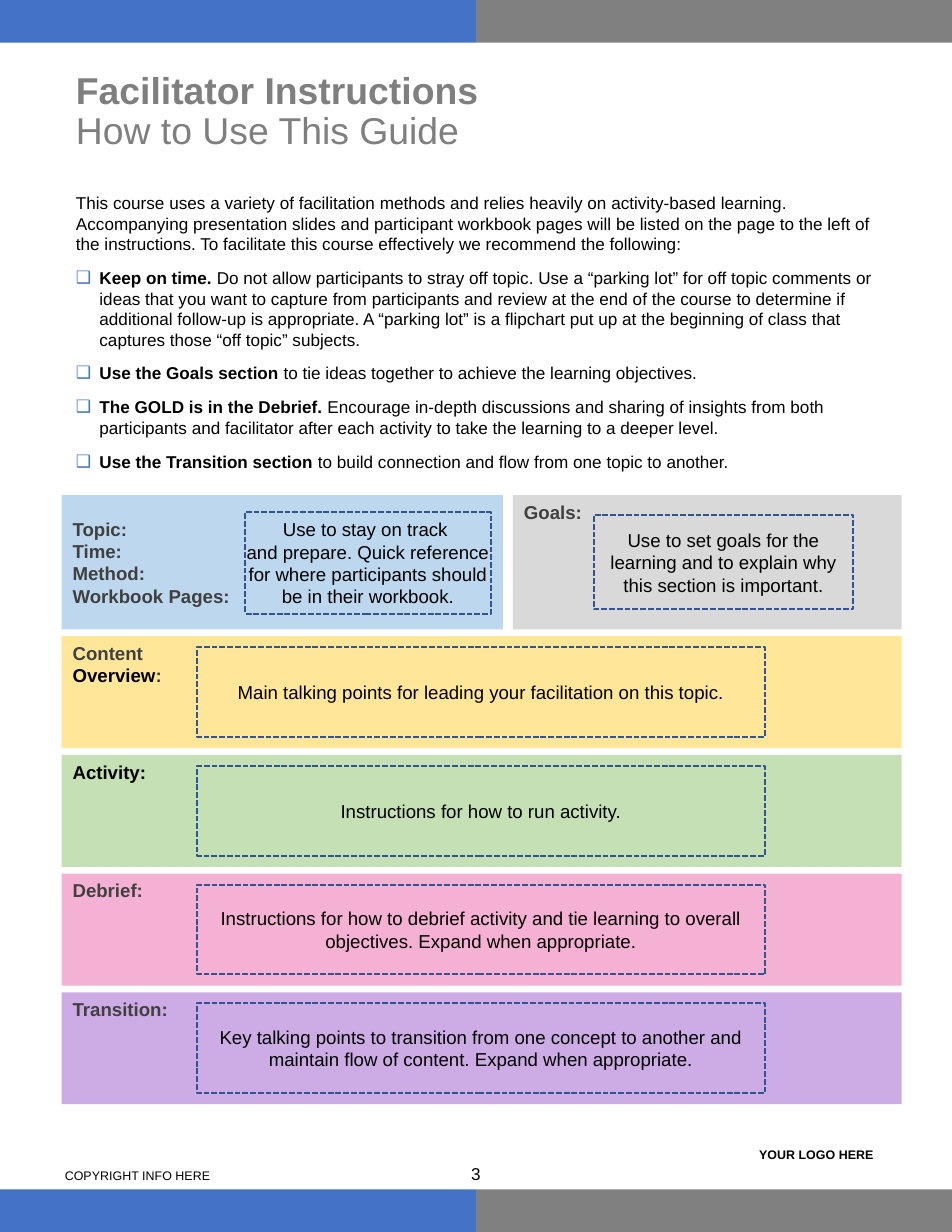
"""Build the facilitator instructions page of a course guide."""
from copy import deepcopy
from dataclasses import dataclass
from typing import NamedTuple

from lxml import etree
from pptx import Presentation
from pptx.dml.color import RGBColor
from pptx.enum.dml import MSO_LINE
from pptx.enum.shapes import MSO_SHAPE
from pptx.enum.text import MSO_ANCHOR, PP_ALIGN
from pptx.oxml.ns import qn
from pptx.util import Emu, Inches, Pt

RECT = MSO_SHAPE.RECTANGLE
DASH = MSO_LINE.SQUARE_DOT
TOP, MIDDLE = MSO_ANCHOR.TOP, MSO_ANCHOR.MIDDLE
LEFT, CENTER = PP_ALIGN.LEFT, PP_ALIGN.CENTER
COLS, ROWS = 85, 110
WIDTH, HEIGHT = Inches(8.5), Inches(11)


@dataclass(frozen=True)
class Theme:
    font: str = "Arial"
    blue: str = "4472C4"
    gray: str = "808080"
    title: str = "7F7F7F"
    ink: str = "000000"
    label: str = "404040"
    dash: str = "325491"
    title_pt: float = 24
    body_pt: float = 11
    box_pt: float = 12
    footer_pt: float = 8
    gap_pt: float = 8.5
    dash_pt: float = 1.25


T = Theme()


class Box(NamedTuple):
    col: float
    row: float
    cols: float
    rows: float


class Span(NamedTuple):
    text: str
    bold: bool = False
    color: str = T.ink
    new_line: bool = False


class Style(NamedTuple):
    size: float
    align: PP_ALIGN = LEFT
    anchor: MSO_ANCHOR = TOP
    inset: tuple[float, float] = (1, 0.5)


class Panel(NamedTuple):
    box: Box
    fill: str
    label: list[list[Span]]
    note_box: Box
    note: list[str]
    anchor: MSO_ANCHOR = TOP
    note_inset: tuple[float, float] = (1, 1)


def label(text: str, color: str = T.label, new_line: bool = False) -> Span:
    """Return a bold panel heading."""
    return Span(text, True, color, new_line)


def band(index: int, fill: str, heading: list[Span], note: str) -> Panel:
    """Return a full-width panel in the stack below the top pair."""
    row = 56.8 + 10.6 * index
    return Panel(Box(5.5, row, 75, 10), fill, [heading], Box(17.6, row + 1, 50.7, 8), [note])


PANELS = [
    Panel(Box(5.5, 44.2, 39.4, 12), "BDD7EE",
          [[label(t)] for t in ("Topic:", "Time:", "Method:", "Workbook Pages:")],
          Box(21.9, 45.7, 21.9, 9.1),
          ["Use to stay on track ",
           "and prepare. Quick reference for where participants should be in their workbook."],
          MIDDLE, (0, 0.5)),
    band(0, "FFE699", [label("Content "), label("Overview", T.ink, True), label(":")],
         "Main talking points for leading your facilitation on this topic."),
    band(1, "C5E0B4", [label("Activity:", T.ink)], "Instructions for how to run activity."),
    band(2, "F5B1D3", [label("Debrief:")],
         "Instructions for how to debrief activity and tie learning to overall objectives. "
         "Expand when appropriate."),
    band(3, "CDACE6", [label("Transition:")],
         "Key talking points to transition from one concept to another and maintain flow of "
         "content. Expand when appropriate."),
    Panel(Box(45.8, 44.2, 34.7, 12), "D9D9D9", [[label("Goals:")]],
          Box(53, 46, 23.2, 8.4),
          ["Use to set goals for the learning and to explain why this section is important."],
          note_inset=(0, 0.5)),
]

INTRO = ("This course uses a variety of facilitation methods and relies heavily on activity-based "
         "learning. Accompanying presentation slides and participant workbook pages will be listed "
         "on the page to the left of the instructions. To facilitate this course effectively we "
         "recommend the following:")
TIPS = [
    ("Keep on time. ",
     "Do not allow participants to stray off topic. Use a “parking lot” for off topic comments or "
     "ideas that you want to capture from participants and review at the end of the course to "
     "determine if additional follow-up is appropriate. A “parking lot” is a flipchart put up at "
     "the beginning of class that captures those “off topic” subjects."),
    ("Use the Goals section", " to tie ideas together to achieve the learning objectives."),
    ("The GOLD is in the Debrief. ",
     "Encourage in-depth discussions and sharing of insights from both participants and "
     "facilitator after each activity to take the learning to a deeper level."),
    ("Use the Transition section", " to build connection and flow from one topic to another."),
]


def across(cols: float) -> Emu:
    """Convert grid columns to a length."""
    return Emu(round(WIDTH * cols / COLS))


def down(rows: float) -> Emu:
    """Convert grid rows to a length."""
    return Emu(round(HEIGHT * rows / ROWS))


def place(box: Box) -> tuple[Emu, Emu, Emu, Emu]:
    """Return the left, top, width and height of a grid box."""
    return across(box.col), down(box.row), across(box.cols), down(box.rows)


def write(sp, paragraphs: list[list[Span]], style: Style) -> list:
    """Fill a shape with styled paragraphs and return them."""
    tf = sp.text_frame
    tf.word_wrap = True
    tf.vertical_anchor = style.anchor
    tf.margin_left = tf.margin_right = across(style.inset[0])
    tf.margin_top = tf.margin_bottom = down(style.inset[1])
    tf.text = "\n" * (len(paragraphs) - 1)
    for p, spans in zip(tf.paragraphs, paragraphs):
        p.alignment = style.align
        for span in spans:
            if span.new_line:
                p.add_line_break()
                p._p[-1].append(deepcopy(p.runs[-1]._r.rPr))
            r = p.add_run()
            r.text = span.text
            r.font.name, r.font.size, r.font.bold = T.font, Pt(style.size), span.bold
            r.font.color.rgb = RGBColor.from_string(span.color)
    return list(tf.paragraphs)


def add_text(s, box: Box, paragraphs: list[list[Span]], style: Style) -> list:
    """Add a text box and return its paragraphs."""
    return write(s.shapes.add_textbox(*place(box)), paragraphs, style)


def add_rect(s, box: Box, fill: str | None = None):
    """Add a filled rectangle, or a dashed outline when no fill is given."""
    sp = s.shapes.add_shape(RECT, *place(box))
    sp.shadow.inherit = False
    if fill:
        sp.fill.solid()
        sp.fill.fore_color.rgb = RGBColor.from_string(fill)
        sp.line.fill.background()
    else:
        sp.fill.background()
        sp.line.color.rgb = RGBColor.from_string(T.dash)
        sp.line.width, sp.line.dash_style = Pt(T.dash_pt), DASH
    return sp


def add_bullet(p) -> None:
    """Give a paragraph a hanging checkbox bullet."""
    pPr = p._p.get_or_add_pPr()
    indent = across(2.1)
    pPr.set("marL", str(indent))
    pPr.set("indent", str(-indent))
    color = etree.SubElement(pPr, qn("a:buClr"))
    etree.SubElement(color, qn("a:srgbClr"), val=T.blue)
    etree.SubElement(pPr, qn("a:buFont"), typeface=T.font)
    etree.SubElement(pPr, qn("a:buChar"), char="❑")


def main() -> None:
    """Draw the page and save it."""
    prs = Presentation()
    prs.slide_width, prs.slide_height = WIDTH, HEIGHT
    s = prs.slides.add_slide(prs.slide_layouts[6])
    for row in (0, ROWS - 3.8):
        for col, fill in ((0, T.blue), (COLS / 2, T.gray)):
            add_rect(s, Box(col, row, COLS / 2, 3.8), fill)
    add_text(s, Box(4.8, 103.8, 56.9, 2.4), [[Span("COPYRIGHT INFO HERE")]], Style(T.footer_pt))
    add_text(s, Box(66.2, 100.8, 13.4, 4.5), [[Span("YOUR LOGO HERE", True)]],
             Style(T.footer_pt, CENTER, MIDDLE))
    title = [Span("Facilitator Instructions  ", True, T.title),
             Span("How to Use This Guide", False, T.title, True)]
    add_text(s, Box(5.8, 5.9, 73.3, 8.2), [title],
             Style(T.title_pt, anchor=MIDDLE))[0].line_spacing = 0.9
    tips = [[Span(lead, True), Span(rest)] for lead, rest in TIPS]
    body = add_text(s, Box(5.8, 16.7, 73.3, 82.4), [[Span(INTRO)], *tips], Style(T.body_pt))
    for p in body:
        p.space_before = Pt(T.gap_pt)
    for p in body[1:]:
        add_bullet(p)
    add_text(s, Box(40, 103.4, 5, 4.2), [[Span("3")]], Style(T.body_pt, CENTER))
    for panel in PANELS:
        write(add_rect(s, panel.box, panel.fill), panel.label, Style(T.box_pt, anchor=panel.anchor))
    for panel in PANELS:
        write(add_rect(s, panel.note_box), [[Span(t)] for t in panel.note],
              Style(T.box_pt, CENTER, MIDDLE, panel.note_inset))
    prs.save("out.pptx")


if __name__ == "__main__":
    main()
